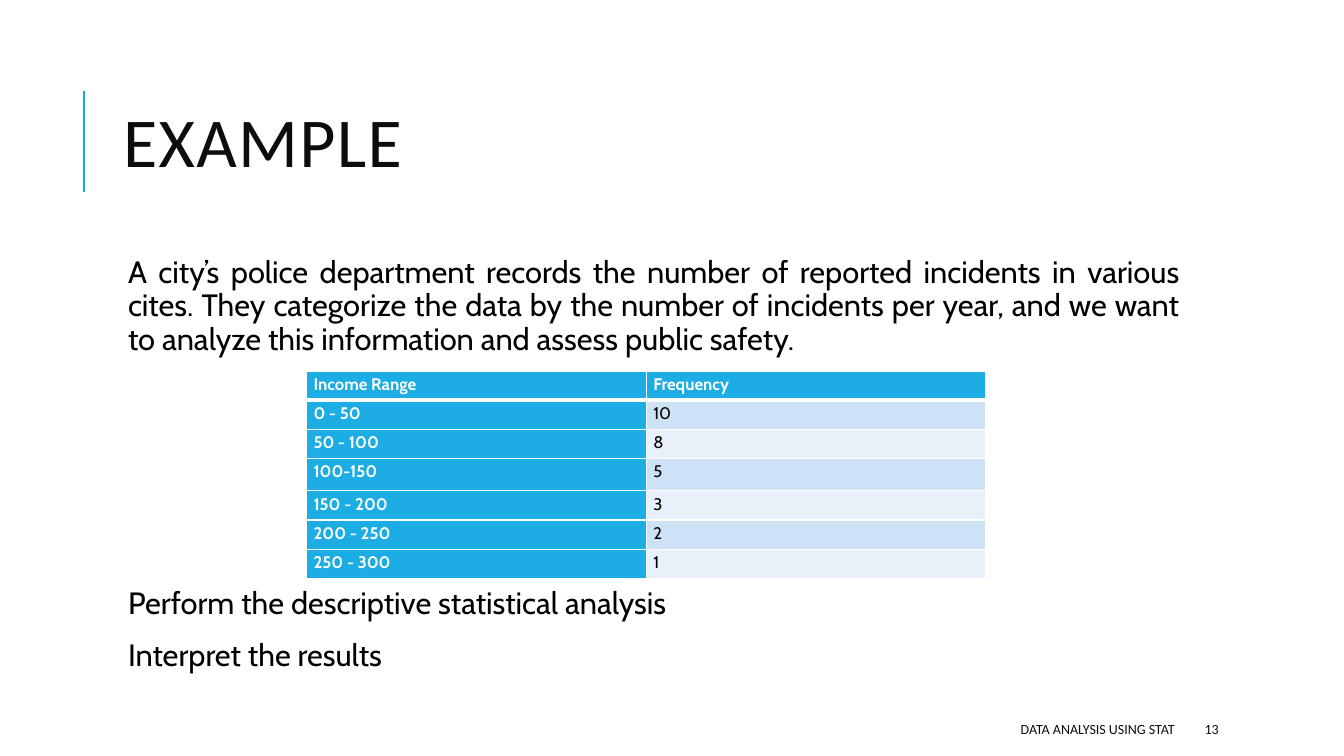
from lxml import etree
from pptx import Presentation
from pptx.dml.color import RGBColor
from pptx.enum.shapes import MSO_CONNECTOR
from pptx.enum.text import MSO_ANCHOR, PP_ALIGN
from pptx.oxml.ns import qn
from pptx.util import Inches, Pt

LEFT, RIGHT, JUSTIFY = PP_ALIGN.LEFT, PP_ALIGN.RIGHT, PP_ALIGN.JUSTIFY
TOP, MIDDLE = MSO_ANCHOR.TOP, MSO_ANCHOR.MIDDLE
STRAIGHT = MSO_CONNECTOR.STRAIGHT

COLORS = {
    "accent": "1CADE4", "band": "CDE3F5", "pale": "E8F1FA",
    "white": "FFFFFF", "black": "000000", "ink": "0D0D0D",
}
INTRO = (
    "A city’s police department records the number of reported incidents "
    "in various cites. They categorize the data by the number of incidents "
    "per year, and we want to analyze this information and assess public safety."
)
TASKS = ["Perform the descriptive statistical analysis", "Interpret the results"]
ROWS = [
    ("Income Range", "Frequency"), ("0 - 50", "10"), ("50 - 100", "8"),
    ("100-150", "5"), ("150 - 200", "3"), ("200 - 250", "2"), ("250 - 300", "1"),
]
ROW_H, TALL_ROW, TALL_H = 0.29, 3, 0.32


def color(name):
    return RGBColor.from_string(COLORS[name])


def write(frame, lines, size=22, font="Cabin", ink="black", bold=False,
          align=LEFT, anchor=TOP, spacing=1.0, before=0, after=0, track=0):
    """Fill a text frame with one paragraph per line."""
    frame.word_wrap = True
    frame.vertical_anchor = anchor
    for i, line in enumerate(lines):
        para = frame.add_paragraph() if i else frame.paragraphs[0]
        para.alignment = align
        para.line_spacing = spacing
        para.space_before = Pt(before if i else 0)
        para.space_after = Pt(after)
        run = para.add_run()
        run.text = line
        run.font.name = font
        run.font.size = Pt(size)
        run.font.bold = bold
        run.font.color.rgb = color(ink)
        if track:
            run.font._element.set("spc", str(track * 100))


def add_text(slide, box, lines, inset=(0.1, 0.05), **style):
    frame = slide.shapes.add_textbox(*map(Inches, box)).text_frame
    frame.margin_left, frame.margin_right = map(Inches, (inset[0], 0.05))
    frame.margin_top = frame.margin_bottom = Inches(inset[1])
    write(frame, lines, **style)


def add_title(slide, text):
    title = slide.shapes.title
    title.left, title.top, title.width, title.height = map(
        Inches, (1.12, 0.64, 10.63, 1.64))
    write(title.text_frame, [text], size=50, font="Calibri", ink="ink",
          anchor=MIDDLE, spacing=0.8, track=1)


def add_rule(slide):
    rule = slide.shapes.add_connector(
        STRAIGHT, *map(Inches, (0.83, 1.9, 0.83, 0.9)))
    rule.line.color.rgb = color("accent")
    rule.line.width = Pt(1.5)
    etree.SubElement(rule._element.spPr, qn("a:effectLst"))


def set_edges(cell, widths):
    """Draw white borders; the fill has to follow them in the XML."""
    props = cell._tc.get_or_add_tcPr()
    for side, width in widths.items():
        edge = etree.SubElement(props, qn("a:ln" + side), w=str(Pt(width)))
        fill = etree.SubElement(edge, qn("a:solidFill"))
        etree.SubElement(fill, qn("a:srgbClr"), val=COLORS["white"])


def add_grid(slide):
    grid = slide.shapes.add_table(
        len(ROWS), 2, *map(Inches, (3.04, 3.68, 6.74, 2.06))).table
    for col in grid.columns:
        col.width = Inches(3.37)
    for r, values in enumerate(ROWS):
        grid.rows[r].height = Inches(TALL_H if r == TALL_ROW else ROW_H)
        for c, value in enumerate(values):
            cell = grid.cell(r, c)
            head = r == 0 or c == 0
            cell.margin_left = cell.margin_right = Inches(0.07)
            cell.margin_top = cell.margin_bottom = 0
            set_edges(cell, {"L": 1, "R": 1, "T": 3 if r == 1 else 1,
                             "B": 3 if r == 0 else 1})
            cell.fill.solid()
            cell.fill.fore_color.rgb = color(
                "accent" if head else "band" if r % 2 else "pale")
            write(cell.text_frame, [value], size=12, bold=head, align=JUSTIFY,
                  ink="white" if head else "black", spacing=1.15)


def main():
    deck = Presentation()
    deck.slide_width, deck.slide_height = Inches(13.33), Inches(7.5)
    slide = deck.slides.add_slide(deck.slide_layouts[5])

    # Heading
    add_rule(slide)
    add_title(slide, "EXAMPLE")

    # Problem, data and tasks
    body = {"inset": (0.15, 0.05), "spacing": 0.9, "before": 12, "after": 2}
    add_text(slide, (1.12, 2.5, 10.63, 1.15), [INTRO], align=JUSTIFY, **body)
    add_grid(slide)
    add_text(slide, (1.12, 5.78, 10.63, 1.1), TASKS, **body)

    # Footer
    small = {"size": 10, "font": "Calibri", "ink": "ink", "anchor": MIDDLE}
    add_text(slide, (5.3, 7.08, 6.4, 0.3), ["DATA ANALYSIS USING STAT"],
             align=RIGHT, **small)
    add_text(slide, (11.85, 7.08, 1.06, 0.3), ["13"], **small)

    deck.save("out.pptx")


if __name__ == "__main__":
    main()
